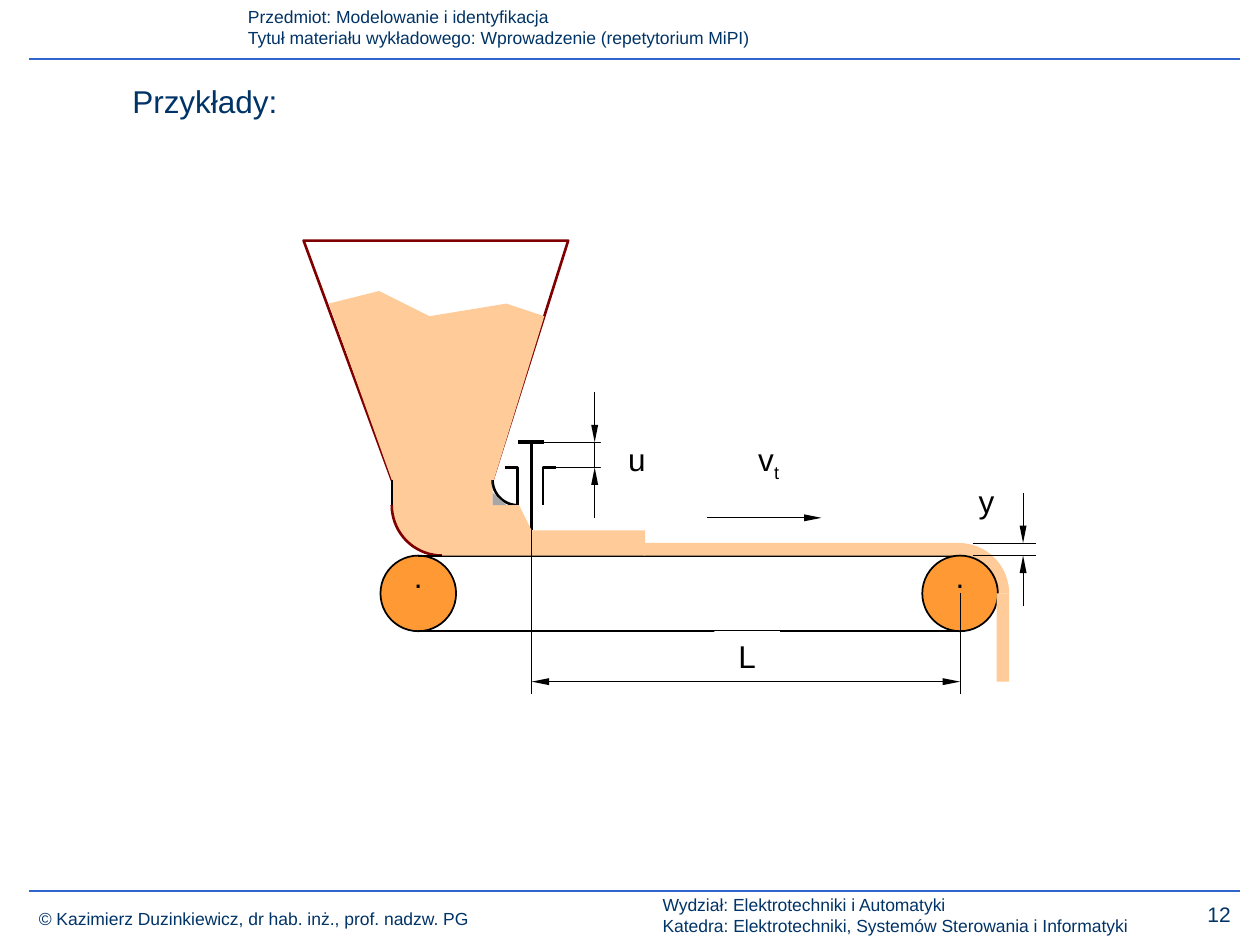
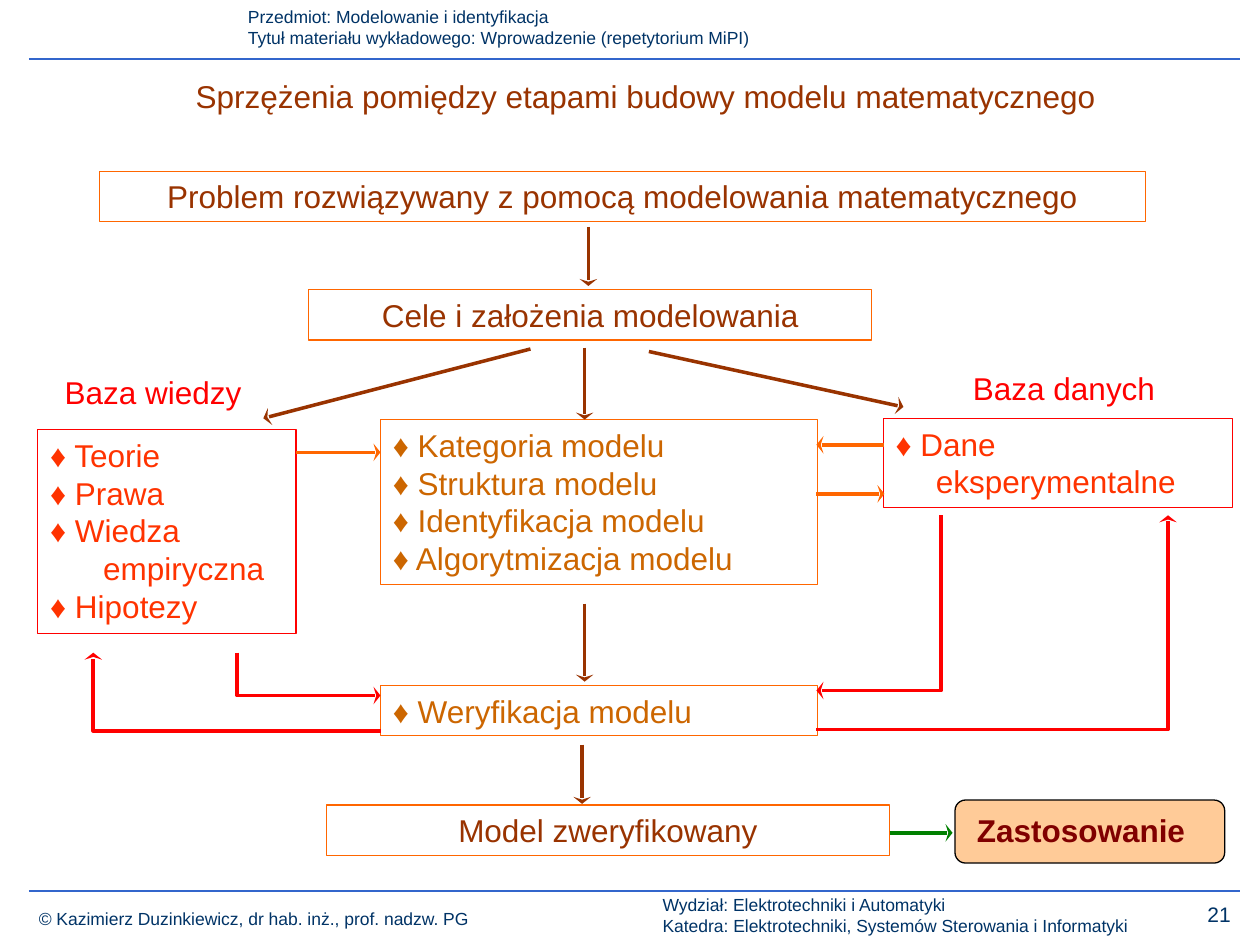
from dataclasses import dataclass
from math import cos, radians, sin

from pptx import Presentation
from pptx.dml.color import RGBColor
from pptx.enum.shapes import MSO_CONNECTOR, MSO_SHAPE
from pptx.enum.text import MSO_ANCHOR, MSO_AUTO_SIZE, PP_ALIGN
from pptx.oxml.ns import qn
from pptx.oxml.xmlchemy import OxmlElement
from pptx.util import Pt

EMU_PER_PX = 9144  # 100 px to the inch
LEFT, CENTER = PP_ALIGN.LEFT, PP_ALIGN.CENTER


@dataclass(frozen=True)
class Theme:
    font: str = "Arial"
    body: int = 18
    small: int = 10
    number: int = 12
    navy: str = "003366"
    rule: str = "3366CC"
    black: str = "000000"
    white: str = "FFFFFF"
    maroon: str = "800000"
    brown: str = "993300"
    ochre: str = "CC6600"
    orange: str = "FF6600"
    amber: str = "FF9933"
    sand: str = "FFCC99"
    grey: str = "A6A6A6"
    red: str = "FF0000"
    vermilion: str = "FF3300"
    green: str = "008000"


THEME = Theme()
SLENDER = {"type": "triangle", "w": "sm", "len": "lg"}
BARBED = {"type": "stealth", "w": "lg", "len": "sm"}


def px(length):
    return round(length * EMU_PER_PX)


def rgb(color):
    return RGBColor.from_string(color)


def set_line(shape, color, width, tail=None, head=None):
    if color is None:
        shape.line.fill.background()
        return
    shape.line.color.rgb = rgb(color)
    shape.line.width = Pt(width)
    outline = shape._element.spPr.find(qn("a:ln"))
    for tag, arrow in (("a:headEnd", head), ("a:tailEnd", tail)):
        if arrow:
            end = OxmlElement(tag)
            for key, value in arrow.items():
                end.set(key, value)
            outline.append(end)


def set_fill(shape, color, alpha=None):
    if color is None:
        shape.fill.background()
        return
    shape.fill.solid()
    shape.fill.fore_color.rgb = rgb(color)
    if alpha:
        opacity = OxmlElement("a:alpha")
        opacity.set("val", str(alpha * 1000))
        shape._element.spPr.find(qn("a:solidFill"))[0].append(opacity)


def write(shape, lines, color=THEME.black, size=THEME.body, align=LEFT,
          bold=False, hanging=0, insets=(10, 5, 10, 5), anchor=MSO_ANCHOR.TOP):
    frame = shape.text_frame
    sides = ("margin_left", "margin_top", "margin_right", "margin_bottom")
    settings = dict(zip(sides, map(px, insets)), word_wrap=True,
                    auto_size=MSO_AUTO_SIZE.NONE, vertical_anchor=anchor)
    for name, value in settings.items():
        setattr(frame, name, value)
    for index, line in enumerate(lines):
        paragraph = frame.add_paragraph() if index else frame.paragraphs[0]
        paragraph.alignment = align
        if hanging:
            properties = paragraph._p.get_or_add_pPr()
            properties.set("marL", str(px(hanging)))
            properties.set("indent", str(-px(hanging)))
        run = paragraph.add_run()
        run.text = line
        style(run, color, size, bold)


def style(run, color, size, bold=False):
    looks = {"name": THEME.font, "size": Pt(size), "bold": bold}
    for name, value in looks.items():
        setattr(run.font, name, value)
    run.font.color.rgb = rgb(color)


@dataclass
class Region:
    """Draws on a slide with lengths measured from its own corner."""
    slide: object
    left: int = 0
    top: int = 0

    def at(self, x, y):
        return px(self.left + x), px(self.top + y)

    def box(self, x, y, width, height):
        return *self.at(x, y), px(width), px(height)

    def shape(self, bounds, fill=None, line=None, width=0.75,
              kind=MSO_SHAPE.RECTANGLE, alpha=None):
        shape = self.slide.shapes.add_shape(kind, *self.box(*bounds))
        shape.shadow.inherit = False
        set_fill(shape, fill, alpha)
        set_line(shape, line, width)
        return shape

    def text(self, bounds, lines, **looks):
        write(self.slide.shapes.add_textbox(*self.box(*bounds)), lines, **looks)

    def line(self, start, end, color=THEME.black, width=0.5, **arrows):
        line = self.slide.shapes.add_connector(
            MSO_CONNECTOR.STRAIGHT, *self.at(*start), *self.at(*end))
        set_line(line, color, width, **arrows)
        line._element.spPr.append(OxmlElement("a:effectLst"))

    def outline(self, points, fill=None, line=None, width=1.5, close=True, **arrows):
        first, *rest = [self.at(*point) for point in points]
        builder = self.slide.shapes.build_freeform(*first)
        builder.add_line_segments(rest, close=close)
        shape = builder.convert_to_shape()
        shape.shadow.inherit = False
        set_fill(shape, fill)
        set_line(shape, line, width, **arrows)


def quarter_arc(center, radius, start, steps=18):
    angles = [radians(start + 90 * step / steps) for step in range(steps + 1)]
    return [(center[0] + radius * cos(a), center[1] + radius * sin(a)) for a in angles]


def add_page(deck, title, bounds, color, align, number):
    """Adds a slide with its title, header, rules and footer."""
    slide = deck.slides.add_slide(deck.slide_layouts[5])
    page = Region(slide)
    heading = slide.shapes.title
    heading.left, heading.top, heading.width, heading.height = page.box(*bounds)
    write(heading, [title], color=color, align=align)

    small = {"color": THEME.navy, "size": THEME.small}
    page.text((187, 0, 813, 44), [
        "Przedmiot: Modelowanie i identyfikacja",
        "Tytuł materiału wykładowego: Wprowadzenie (repetytorium MiPI)"], **small)
    for y in (47, 707):
        page.line((23, y), (984, y), THEME.rule, 1.25)
    page.text((21, 716, 402, 27),
              ["© Kazimierz Duzinkiewicz, dr hab. inż., prof. nadzw. PG"], **small)
    page.text((516, 705, 445, 44), [
        "Wydział: Elektrotechniki i Automatyki",
        "Katedra: Elektrotechniki, Systemów Sterowania i Informatyki"], **small)
    page.text((935, 711, 65, 30), [str(number)], color=THEME.navy,
              size=THEME.number, align=CENTER)
    return slide


def draw_hopper(region):
    region.outline([(0, 0), (70, 190), (150, 190), (210, 0)], line=THEME.maroon)
    region.shape((70, 190, 80, 20), THEME.sand)
    chute_center = (110, 210)
    chute = quarter_arc(chute_center, 40, 90)
    region.outline([*chute, chute_center], THEME.sand)
    region.outline(chute, line=THEME.maroon, close=False)
    region.line((70, 190), (70, 210), width=1.5)
    spout = quarter_arc((170, 190), 20, 90)
    left_guide = [(160, 180), (170, 180), (170, 210)]
    right_guide = [(200, 180), (190, 180), (190, 210)]
    for edge in (spout, left_guide, right_guide):
        region.outline(edge, line=THEME.black, close=False)
    region.line((181, 160), (181, 230), width=2)
    region.line((170, 160), (191, 160), width=2)


def draw_pulley(region, x):
    region.shape((x, 250, 60, 60), THEME.amber, THEME.black, 1, MSO_SHAPE.OVAL)
    region.text((x + 20, 250, 20, 43), ["."], align=CENTER, insets=(1, 1, 1, 1))


def draw_conveyor(region):
    draw_pulley(region, 61)
    for y in (250, 310):
        region.line((91, y), (521, y), width=1)
    region.outline([(110, 210), (171, 210), (181, 230), (271, 230), (271, 250),
                    (110, 250)], THEME.sand)
    region.shape((270, 240, 251, 10), THEME.sand)
    region.outline([(20, 50), (60, 40), (100, 60), (161, 50), (191, 60),
                    (151, 190), (70, 190)], THEME.sand)
    region.outline([(150, 190), (150, 200), (161, 210), (171, 210), (150, 210)],
                   THEME.grey)
    fall_center = (520, 280)
    region.outline([*quarter_arc(fall_center, 40, 270), fall_center], THEME.sand)
    draw_pulley(region, 491)
    region.shape((550, 280, 10, 70), THEME.sand)


def draw_dimensions(region):
    plain = [((181, 230), (181, 360)), ((521, 280), (521, 360)),
             ((191, 160), (241, 160)), ((200, 180), (241, 180)),
             ((231, 160), (231, 180)),
             ((531, 240), (581, 240)), ((531, 250), (581, 250))]
    arrows = [((231, 120), (231, 160)), ((231, 220), (231, 180)),
              ((320, 220), (411, 220)),
              ((571, 200), (571, 240)), ((571, 290), (571, 250))]
    for start, end in plain:
        region.line(start, end)
    for start, end in arrows:
        region.line(start, end, tail=SLENDER)
    region.line((181, 350), (521, 350), head=SLENDER, tail=SLENDER)

    symbols = [((236, 153, 57, 38), "u", ""), ((516, 187, 52, 35), "y", ""),
               ((343, 153, 52, 58), "v", "t"), ((326, 310, 52, 34), "L", "")]
    for bounds, symbol, subscript in symbols:
        label = region.shape(bounds, THEME.white)
        write(label, [symbol], align=CENTER)
        if subscript:
            run = label.text_frame.paragraphs[0].add_run()
            run.text = subscript
            style(run, THEME.black, THEME.body)
            run._r.get_or_add_rPr().set("baseline", "-25000")


def draw_stages(region):
    centered = {"color": THEME.brown, "align": CENTER}
    listed = {"color": THEME.ochre, "hanging": 42}
    sources = {"color": THEME.vermilion}
    stages = [
        ((49, 0, 830, 40), THEME.orange, centered,
         ["Problem rozwiązywany z pomocą modelowania matematycznego"]),
        ((215, 94, 447, 40), THEME.orange, centered, ["Cele i założenia modelowania"]),
        ((0, 205, 205, 162), THEME.red, {**sources, "hanging": 42},
         ["♦ Teorie", "♦ Prawa", "♦ Wiedza empiryczna", "♦ Hipotezy"]),
        ((671, 196, 277, 71), THEME.red, {**sources, "hanging": 32},
         ["♦ Dane eksperymentalne"]),
        ((272, 197, 347, 131), THEME.orange, listed,
         ["♦ Kategoria modelu", "♦ Struktura modelu", "♦ Identyfikacja modelu",
          "♦ Algorytmizacja modelu"]),
        ((272, 408, 347, 40), THEME.orange, listed, ["♦ Weryfikacja modelu"]),
        ((229, 503, 447, 40), THEME.orange, centered, ["Model zweryfikowany"]),
    ]
    for bounds, border, looks, lines in stages:
        write(region.shape(bounds, line=border), lines, **looks)
    for bounds, base in (((6, 155, 171, 40), "Baza wiedzy"),
                         ((726, 152, 177, 40), "Baza danych")):
        region.text(bounds, [base], color=THEME.red, align=CENTER)
    application = region.shape((728, 499, 214, 50), THEME.amber, THEME.black,
                               kind=MSO_SHAPE.ROUNDED_RECTANGLE, alpha=50)
    write(application, ["Zastosowanie"], color=THEME.maroon, bold=True,
          insets=(15, 0, 5, 2), anchor=MSO_ANCHOR.MIDDLE)


def draw_links(region):
    straight = {
        THEME.brown: [((437, 44), (437, 91)), ((434, 140), (434, 197)),
                      ((391, 141), (179, 196)), ((485, 143), (687, 187)),
                      ((434, 343), (434, 405)), ((432, 455), (432, 502))],
        THEME.orange: [((205, 223), (272, 223)), ((672, 217), (618, 217)),
                       ((618, 256), (672, 256))],
        THEME.green: [((676, 525), (726, 525))],
    }
    for color, links in straight.items():
        for start, end in links:
            region.line(start, end, color, 2, tail=BARBED)
    feedback = [[(158, 382), (158, 416), (272, 416)],
                [(272, 444), (44, 444), (44, 382)],
                [(717, 273), (717, 412), (618, 412)],
                [(618, 443), (897, 443), (897, 273)]]
    for bend in feedback:
        region.outline(bend, line=THEME.red, width=2, close=False, tail=BARBED)


def main():
    deck = Presentation()
    deck.slide_width, deck.slide_height = px(1000), px(750)

    examples = add_page(deck, "Przykłady:", (95, 60, 178, 40), THEME.navy, LEFT, 12)
    feeder = Region(examples, 241, 191)
    for draw in (draw_hopper, draw_conveyor, draw_dimensions):
        draw(feeder)

    couplings = add_page(
        deck, "Sprzężenia pomiędzy etapami budowy modelu matematycznego",
        (25, 56, 975, 40), THEME.brown, CENTER, 21)
    flow = Region(couplings, 30, 136)
    for draw in (draw_stages, draw_links):
        draw(flow)

    deck.save("out.pptx")


if __name__ == "__main__":
    main()
